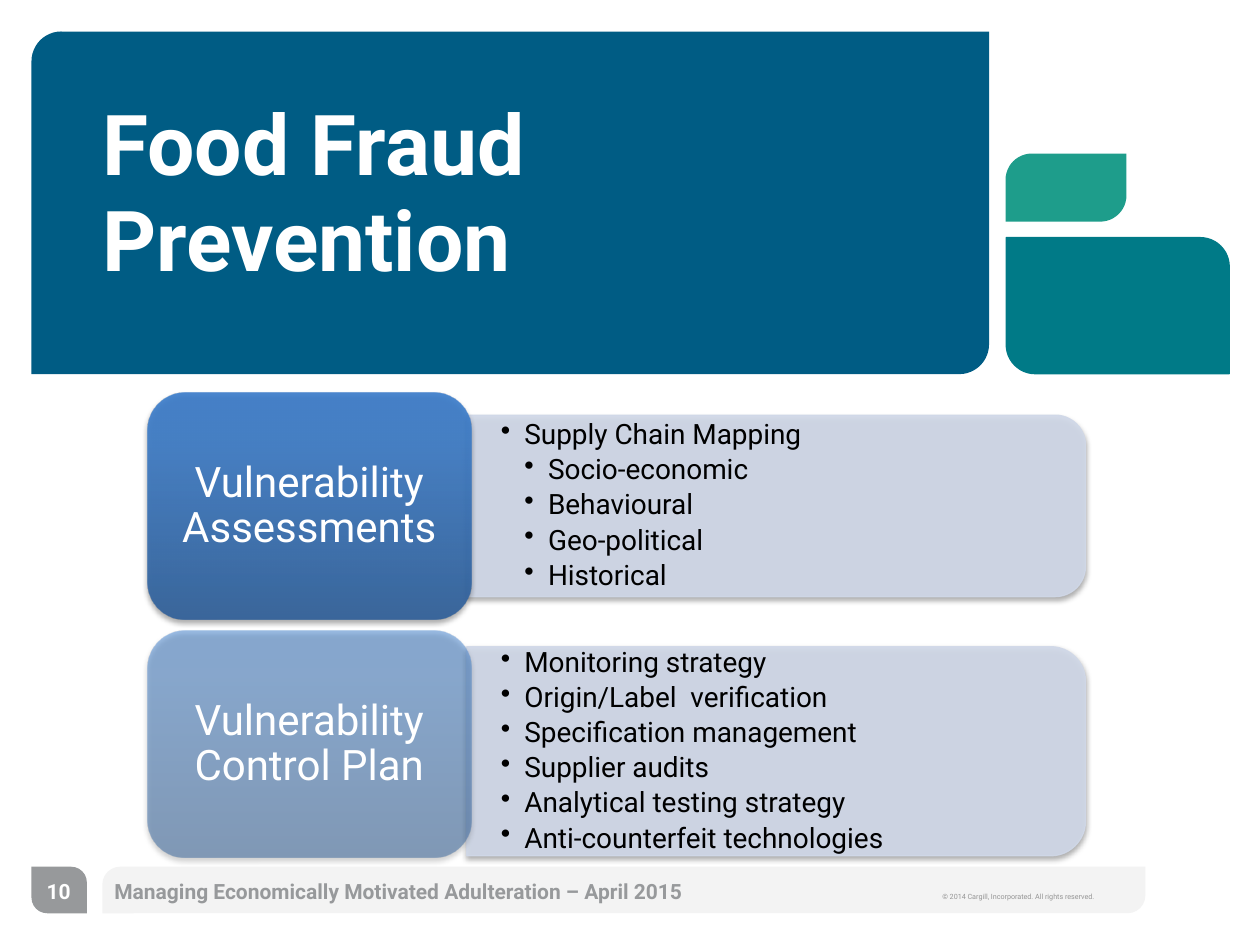
from dataclasses import dataclass

from pptx import Presentation
from pptx.dml.color import RGBColor
from pptx.enum.shapes import MSO_SHAPE
from pptx.enum.text import MSO_ANCHOR, PP_ALIGN
from pptx.oxml import parse_xml
from pptx.oxml.ns import nsdecls, qn
from pptx.util import Pt

DIAGONAL = MSO_SHAPE.ROUND_2_DIAG_RECTANGLE
SAME_SIDE = MSO_SHAPE.ROUND_2_SAME_RECTANGLE
ROUNDED = MSO_SHAPE.ROUNDED_RECTANGLE
TOP, MIDDLE = MSO_ANCHOR.TOP, MSO_ANCHOR.MIDDLE
LEFT, CENTER = PP_ALIGN.LEFT, PP_ALIGN.CENTER


@dataclass(frozen=True)
class Theme:
    font: str = "Roboto"
    white: str = "FFFFFF"
    black: str = "000000"
    navy: str = "005C84"
    green: str = "1E9D8B"
    teal: str = "007A87"
    grey: str = "97999B"
    copyright_grey: str = "959595"
    footer_grey: str = "D0D0D0"
    panel: str = "D0D8E8"
    label_stops: tuple = ((0, "2F5F99"), (80, "3D7CC7"), (100, "3A7CCB"))
    title_size: int = 48
    label_size: int = 24
    bullet_size: int = 16
    footer_size: int = 12
    copyright_size: int = 7


theme = Theme()
presentation = Presentation()
presentation.slide_width, presentation.slide_height = Pt(720), Pt(540)
slide = presentation.slides.add_slide(presentation.slide_layouts[6])


def add_block(preset, box, adjustments, color):
    shape = slide.shapes.add_shape(preset, *map(Pt, box))
    for index, value in enumerate(adjustments):
        shape.adjustments[index] = value
    shape.shadow.inherit = False
    shape.fill.solid()
    shape.fill.fore_color.rgb = RGBColor.from_string(color)
    shape.line.fill.background()
    return shape


def add_text(box, lines, size, color, bold=False, align=LEFT, anchor=MIDDLE,
             margins=(7.2, 3.6), wrap=True):
    """Add a text box with one paragraph for each line; return its paragraphs."""
    frame = slide.shapes.add_textbox(*map(Pt, box)).text_frame
    frame.word_wrap = wrap
    frame.vertical_anchor = anchor
    frame.margin_left = frame.margin_right = Pt(margins[0])
    frame.margin_top = frame.margin_bottom = Pt(margins[1])
    frame.text = "\n".join(lines)
    for paragraph in frame.paragraphs:
        paragraph.alignment = align
        paragraph.font.name = theme.font
        paragraph.font.size = Pt(size)
        paragraph.font.bold = bold
        paragraph.font.color.rgb = RGBColor.from_string(color)
    return frame.paragraphs


# Footer
footer_bar = add_block(DIAGONAL, (58.5, 495.3, 596, 26.6), (0.381, 0), theme.footer_grey)
footer_color = footer_bar._element.spPr.find(".//" + qn("a:srgbClr"))
footer_color.append(parse_xml(f'<a:alpha {nsdecls("a")} val="25000"/>'))
add_block(DIAGONAL, (18, 495.3, 31.7, 26.6), (0, 0.337), theme.grey)
copyright_line = add_text(
    (531.4, 505.4, 114.5, 15.8), ["© 2014 Cargill, Incorporated. All rights reserved."],
    theme.copyright_size, theme.copyright_grey, anchor=TOP, wrap=False)[0]
copyright_line.runs[0]._r.get_or_add_rPr().set("baseline", "30000")
add_text((58.3, 494.6, 391.7, 28.8),
         ["Managing Economically Motivated Adulteration – April 2015"],
         theme.footer_size, theme.grey, bold=True)
add_text((18.7, 494.6, 29.5, 28.8), ["10"], theme.footer_size, theme.white,
         bold=True, align=CENTER, wrap=False)

# Title band
add_block(DIAGONAL, (18, 18, 547.2, 195.8), (0.087, 0), theme.navy)
add_block(DIAGONAL, (574.6, 87.8, 69.1, 38.9), (0.386, 0), theme.green)
add_block(DIAGONAL, (574.6, 135.4, 128.2, 78.5), (0.006, 0.216), theme.teal)
title = add_text((58.5, 54.7, 396, 108), ["Food Fraud Prevention"], theme.title_size,
                 theme.white, bold=True, anchor=TOP, margins=(0, 0))[0]
title.line_spacing = Pt(55)

# Label, label top, label opacity, panel middle, panel height, (level, bullet) pairs
rows = [
    ("Vulnerability Assessments", 224.6, 90, 289.1, 103.7,
     [(1, "Supply Chain Mapping"), (2, "Socio-economic"), (2, "Behavioural"),
      (2, "Geo-political"), (2, "Historical")]),
    ("Vulnerability Control Plan", 360.7, 50, 429.3, 119.5,
     [(1, "Monitoring strategy"), (1, "Origin/Label  verification"),
      (1, "Specification management"), (1, "Supplier audits"),
      (1, "Analytical testing strategy"), (1, "Anti-counterfeit technologies")]),
]
LABEL_LEFT, LABEL_WIDTH, LABEL_HEIGHT, LABEL_INSET = 84.2, 185, 129.6, 6.2
PANEL_LEFT, PANEL_LENGTH = 266.8, 353.5
INDENT = 13.5

for label, label_top, opacity, middle, height, bullets in rows:
    # The panel is drawn upright and turned, so its round corners face right.
    panel = add_block(
        SAME_SIDE,
        (PANEL_LEFT + (PANEL_LENGTH - height) / 2, middle - PANEL_LENGTH / 2,
         height, PANEL_LENGTH), (), theme.panel)
    panel.rotation = 90
    panel.line.color.rgb = RGBColor.from_string(theme.panel)
    panel.line.width = Pt(0.75)
    for color in panel._element.spPr.iter(qn("a:srgbClr")):
        color.append(parse_xml(f'<a:alpha {nsdecls("a")} val="90000"/>'))

    paragraphs = add_text(
        (PANEL_LEFT, middle - height / 2 + 5, PANEL_LENGTH - 5, height - 10),
        [text for level, text in bullets], theme.bullet_size, theme.black,
        margins=(19.4, 10))
    for paragraph, (level, text) in zip(paragraphs, bullets):
        paragraph.level = level
        paragraph.line_spacing = 0.9
        paragraph.space_after = Pt(2.8)
        properties = paragraph._p.get_or_add_pPr()
        properties.set("marL", str(Pt(INDENT * level)))
        properties.set("indent", str(-Pt(INDENT)))
        properties.find(qn("a:defRPr")).addprevious(
            parse_xml(f'<a:buChar {nsdecls("a")} char="•"/>'))

    tile = add_block(ROUNDED, (LABEL_LEFT, label_top, LABEL_WIDTH, LABEL_HEIGHT), (),
                     theme.label_stops[0][1])
    stops = "".join(
        f'<a:gs pos="{position * 1000}"><a:srgbClr val="{color}">'
        f'<a:alpha val="{opacity * 1000}"/></a:srgbClr></a:gs>'
        for position, color in theme.label_stops)
    solid_fill = tile._element.spPr.find(qn("a:solidFill"))
    solid_fill.getparent().replace(solid_fill, parse_xml(
        f'<a:gradFill {nsdecls("a")} rotWithShape="1"><a:gsLst>{stops}</a:gsLst>'
        '<a:lin ang="16200000" scaled="0"/></a:gradFill>'))

    for shape in (panel, tile):
        shape._element.spPr.find(qn("a:effectLst")).append(parse_xml(
            f'<a:outerShdw {nsdecls("a")} blurRad="{Pt(3.1)}" dist="{Pt(1.8)}" '
            f'dir="5400000" rotWithShape="0"><a:srgbClr val="{theme.black}">'
            '<a:alpha val="35000"/></a:srgbClr></a:outerShdw>'))

    label_paragraph = add_text(
        (LABEL_LEFT + LABEL_INSET, label_top + LABEL_INSET,
         LABEL_WIDTH - 2 * LABEL_INSET, LABEL_HEIGHT - 2 * LABEL_INSET),
        [label], theme.label_size, theme.white, align=CENTER)[0]
    label_paragraph.line_spacing = 0.9

presentation.save("out.pptx")
